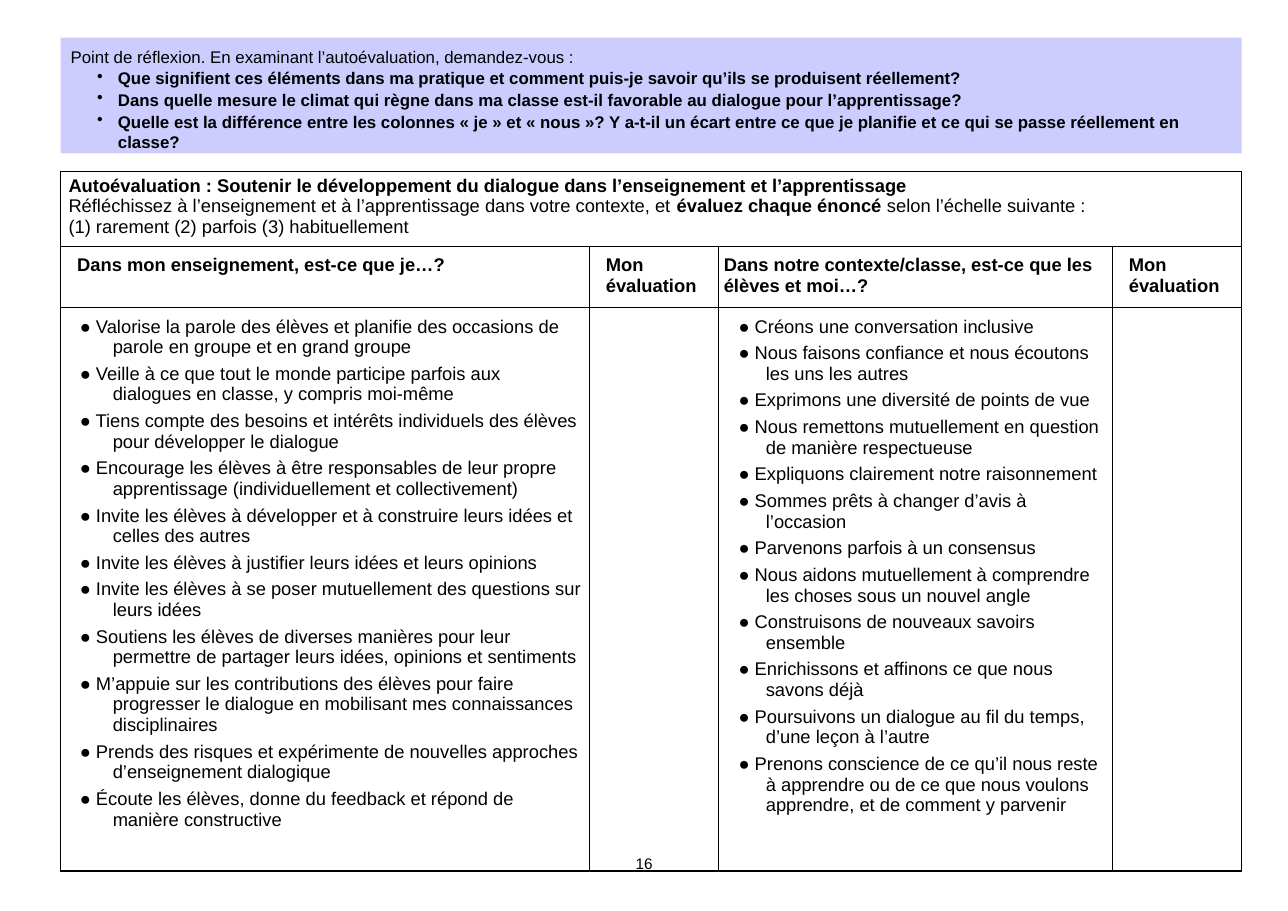
"""Build the self-assessment slide on dialogue in teaching and learning."""
from dataclasses import dataclass

from lxml import etree
from pptx import Presentation
from pptx import table as tb
from pptx import util as u
from pptx.dml import color, fill
from pptx.enum import shapes, text
from pptx.oxml import ns
from pptx.text import text as tx

FONT = "Arial"
BLACK = "000000"
LAVENDER = "CCCCFF"
LEFT, WIDTH = 1.4, 27.23
COLUMN_WIDTHS = (12.19, 2.97, 9.09, 2.97)
ROW_HEIGHTS = (1.71, 1.4, 12.95)


@dataclass(frozen=True)
class Run:
    text: str
    bold: bool = False


@dataclass(frozen=True)
class Line:
    runs: tuple[Run, ...]
    margin: float = 0
    indent: float = 0
    before: float = 0
    bullet: str = ""


@dataclass(frozen=True)
class Insets:
    horizontal: float
    vertical: float


@dataclass(frozen=True)
class CellContent:
    row: int
    column: int
    lines: list[Line]
    insets: Insets = Insets(0.13, 0.2)


QUESTIONS = (
    "Que signifient ces éléments dans ma pratique et comment puis-je savoir qu’ils se produisent réellement?",
    "Dans quelle mesure le climat qui règne dans ma classe est-il favorable au dialogue pour l’apprentissage?",
    "Quelle est la différence entre les colonnes « je » et « nous »? Y a-t-il un écart entre ce que je planifie "
    "et ce qui se passe réellement en classe?",
)
TEACHER_STATEMENTS = (
    "Valorise la parole des élèves et planifie des occasions de parole en groupe et en grand groupe",
    "Veille à ce que tout le monde participe parfois aux dialogues en classe, y compris moi-même",
    "Tiens compte des besoins et intérêts individuels des élèves pour développer le dialogue",
    "Encourage les élèves à être responsables de leur propre apprentissage (individuellement et collectivement)",
    "Invite les élèves à développer et à construire leurs idées et celles des autres",
    "Invite les élèves à justifier leurs idées et leurs opinions",
    "Invite les élèves à se poser mutuellement des questions sur leurs idées",
    "Soutiens les élèves de diverses manières pour leur permettre de partager leurs idées, opinions et sentiments",
    "M’appuie sur les contributions des élèves pour faire progresser le dialogue en mobilisant mes connaissances "
    "disciplinaires",
    "Prends des risques et expérimente de nouvelles approches d’enseignement dialogique",
    "Écoute les élèves, donne du feedback et répond de manière constructive",
)
CLASS_STATEMENTS = (
    "Créons une conversation inclusive",
    "Nous faisons confiance et nous écoutons les uns les autres",
    "Exprimons une diversité de points de vue",
    "Nous remettons mutuellement en question de manière respectueuse",
    "Expliquons clairement notre raisonnement",
    "Sommes prêts à changer d’avis à l’occasion",
    "Parvenons parfois à un consensus",
    "Nous aidons mutuellement à comprendre les choses sous un nouvel angle",
    "Construisons de nouveaux savoirs ensemble",
    "Enrichissons et affinons ce que nous savons déjà",
    "Poursuivons un dialogue au fil du temps, d’une leçon à l’autre",
    "Prenons conscience de ce qu’il nous reste à apprendre ou de ce que nous voulons apprendre, "
    "et de comment y parvenir",
)
INTRODUCTION = [
    Line((Run("Autoévaluation : Soutenir le développement du dialogue dans l’enseignement et l’apprentissage", True),)),
    Line((
        Run("Réfléchissez à l’enseignement et à l’apprentissage dans votre contexte, et "),
        Run("évaluez chaque énoncé ", True),
        Run("selon l’échelle suivante :"),
    )),
    Line((Run("(1) rarement (2) parfois (3) habituellement"),)),
]


def paint(fill_format: fill.FillFormat, value: str) -> None:
    """Fill with one solid colour."""
    fill_format.solid()
    fill_format.fore_color.rgb = color.RGBColor.from_string(value)


def heading(words: str, margin: float = 0.25) -> list[Line]:
    """Return a bold column heading."""
    return [Line((Run(words, True),), margin)]


def statements(items: tuple[str, ...], margin: float, indent: float) -> list[Line]:
    """Return statements with a hanging dot and a gap between them."""
    return [Line((Run(f"● {item}"),), margin, indent, 4 if number else 0) for number, item in enumerate(items)]


def write(frame: tx.TextFrame, lines: list[Line], size: float) -> None:
    """Write the lines into a text frame, run by run."""
    frame.word_wrap = True
    for number, line in enumerate(lines):
        paragraph = frame.add_paragraph() if number else frame.paragraphs[0]
        paragraph.alignment = text.PP_ALIGN.LEFT
        paragraph.space_before = u.Pt(line.before)
        properties = paragraph._p.get_or_add_pPr()
        properties.set("marL", str(u.Cm(line.margin)))
        properties.set("indent", str(u.Cm(line.indent)))
        if line.bullet:
            etree.SubElement(properties, ns.qn("a:buChar")).set("char", line.bullet)
        for item in line.runs:
            run = paragraph.add_run()
            run.text = item.text
            run.font.name, run.font.size, run.font.bold = FONT, u.Pt(size), item.bold
            paint(run.font.fill, BLACK)


def set_insets(target: tx.TextFrame | tb._Cell, insets: Insets) -> None:
    """Set the inner margins of a text frame or cell."""
    target.margin_left = target.margin_right = u.Cm(insets.horizontal)
    target.margin_top = target.margin_bottom = u.Cm(insets.vertical)


def outline(cell: tb._Cell) -> None:
    """Clear the cell fill and draw its four borders."""
    properties = cell._tc.get_or_add_tcPr()
    for side in ("lnL", "lnR", "lnT", "lnB"):
        border = etree.SubElement(properties, ns.qn(f"a:{side}"), w=str(u.Pt(1)))
        solid = etree.SubElement(border, ns.qn("a:solidFill"))
        etree.SubElement(solid, ns.qn("a:srgbClr"), val=BLACK)
    cell.fill.background()


def fill_table(table: tb.Table, contents: list[CellContent]) -> None:
    """Size, outline and fill the assessment table."""
    table.first_row = table.horz_banding = False
    for column, width in zip(table.columns, COLUMN_WIDTHS):
        column.width = u.Cm(width)
    for row, height in zip(table.rows, ROW_HEIGHTS):
        row.height = u.Cm(height)
    for cell in table.iter_cells():
        outline(cell)
    table.cell(0, 0).merge(table.cell(0, len(COLUMN_WIDTHS) - 1))
    for content in contents:
        cell = table.cell(content.row, content.column)
        set_insets(cell, content.insets)
        write(cell.text_frame, content.lines, 12)


def main() -> None:
    """Create the presentation and save it."""
    presentation = Presentation()
    presentation.slide_width, presentation.slide_height = u.Cm(29.7), u.Cm(21)
    slide = presentation.slides.add_slide(presentation.slide_layouts[6])

    reflection = slide.shapes.add_shape(
        shapes.MSO_SHAPE.RECTANGLE, u.Cm(LEFT), u.Cm(0.87), u.Cm(WIDTH), u.Cm(2.67))
    reflection.shadow.inherit = False
    reflection.line.fill.background()
    paint(reflection.fill, LAVENDER)
    set_insets(reflection.text_frame, Insets(0, 0.2))
    reflection.text_frame.margin_bottom = 0
    reflection.text_frame.vertical_anchor = text.MSO_ANCHOR.TOP
    prompt = Line((Run("Point de réflexion. En examinant l’autoévaluation, demandez-vous :"),), 0.23)
    questions = [Line((Run(question, True),), 1.32, -0.48, 0.9, "•") for question in QUESTIONS]
    write(reflection.text_frame, [prompt, *questions], 11)

    page_number = slide.shapes.add_textbox(u.Cm(14.58), u.Cm(19.69), u.Cm(0.53), u.Cm(0.46))
    set_insets(page_number.text_frame, Insets(0, 0))
    write(page_number.text_frame, [Line((Run("16"),), 0.08)], 10)

    frame = slide.shapes.add_table(
        len(ROW_HEIGHTS), len(COLUMN_WIDTHS), u.Cm(LEFT), u.Cm(3.95), u.Cm(WIDTH), u.Cm(sum(ROW_HEIGHTS)))
    fill_table(frame.table, [
        CellContent(0, 0, INTRODUCTION, Insets(0.18, 0.1)),
        CellContent(1, 0, heading("Dans mon enseignement, est-ce que je…?")),
        CellContent(1, 2, heading("Dans notre contexte/classe, est-ce que les élèves et moi…?", 0)),
        *(CellContent(1, column, heading("Mon évaluation")) for column in (1, 3)),
        CellContent(2, 0, statements(TEACHER_STATEMENTS, 1.07, -0.76)),
        CellContent(2, 2, statements(CLASS_STATEMENTS, 0.97, -0.63)),
    ])
    presentation.save("out.pptx")


if __name__ == "__main__":
    main()
